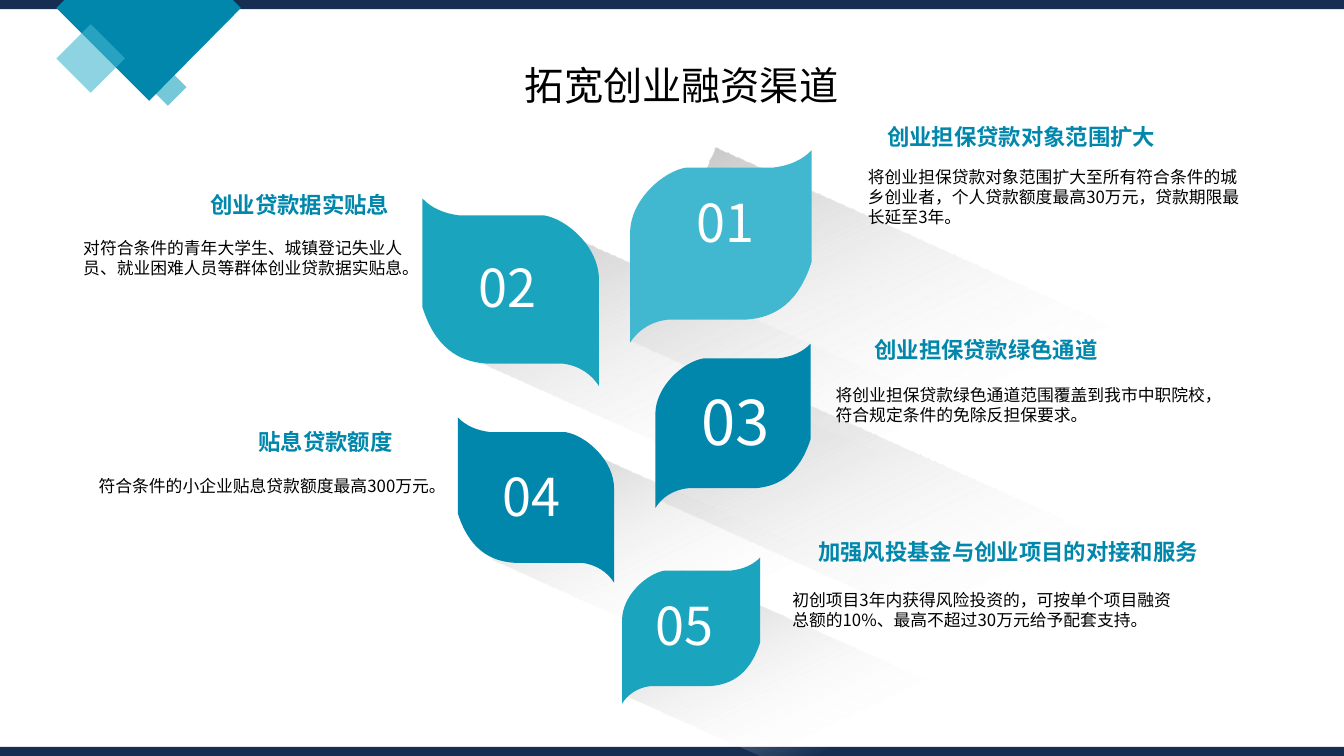
from dataclasses import dataclass

import lxml.etree
import pptx
import pptx.dml.color
import pptx.enum.shapes
import pptx.enum.text
import pptx.oxml.ns
import pptx.util

Inches = pptx.util.Inches
Align = pptx.enum.text.PP_ALIGN
Shape = pptx.enum.shapes.MSO_SHAPE
qn = pptx.oxml.ns.qn


@dataclass(frozen=True)
class Theme:
    font: str = "Noto Sans CJK SC"
    navy: str = "152E52"
    blue: str = "0187AC"
    teal: str = "1AA4BE"
    sky: str = "41B7D0"
    white: str = "FFFFFF"
    black: str = "000000"
    shade: str = "BFBFBF"
    title: float = 28
    number: float = 37.3
    large_number: float = 44
    heading: float = 16
    body: float = 12


@dataclass(frozen=True)
class Measure:
    number: str
    color: str
    petal: tuple
    number_box: tuple
    heading: str
    heading_box: tuple
    body: str
    body_box: tuple
    on_left: bool = False
    number_size: float = Theme.number


THEME = Theme()

MEASURES = [
    Measure("01", THEME.sky, (6.25, 1.49, 1.8, 1.91), (6.81, 1.84, 0.81, 0.73),
            "创业担保贷款对象范围扩大", (8.51, 1.17, 3.24, 0.37),
            "将创业担保贷款对象范围扩大至所有符合条件的城乡创业者，个人贷款额度最高30万元，贷款期限最长延至3年。",
            (8.51, 1.6, 4, 0.71)),
    Measure("02", THEME.teal, (4.19, 1.97, 1.75, 1.86), (4.65, 2.48, 0.81, 0.73),
            "创业贷款据实贴息", (1.6, 1.85, 2.75, 0.37),
            "对符合条件的青年大学生、城镇登记失业人员、就业困难人员等群体创业贷款据实贴息。",
            (0.7, 2.31, 3.39, 0.5), on_left=True),
    Measure("03", THEME.blue, (6.5, 3.41, 1.54, 1.63), (6.86, 3.76, 0.92, 0.84),
            "创业担保贷款绿色通道", (8.19, 3.29, 3.18, 0.37),
            "将创业担保贷款绿色通道范围覆盖到我市中职院校，符合规定条件的免除反担保要求。",
            (8.19, 3.77, 4, 0.5), number_size=THEME.large_number),
    Measure("04", THEME.blue, (4.54, 4.14, 1.55, 1.64), (4.89, 4.56, 0.81, 0.73),
            "贴息贷款额度", (2.14, 4.2, 2.18, 0.37),
            "符合条件的小企业贴息贷款额度最高300万元。",
            (0.7, 4.67, 3.82, 0.3), on_left=True),
    Measure("05", THEME.teal, (6.17, 5.53, 1.37, 1.45), (6.4, 5.84, 0.81, 0.73),
            "加强风投基金与创业项目的对接和服务", (7.91, 5.29, 4.18, 0.37),
            "初创项目3年内获得风险投资的，可按单个项目融资总额的10%、最高不超过30万元给予配套支持。",
            (7.76, 5.8, 4, 0.5)),
]

SHADOWS = [
    (6.53, 4.98, 6.94, 1.47),
    (6.3, 6.46, 4.21, 1.36),
    (4.96, 5.21, 4.69, 1.36),
    (4.64, 3.49, 6.81, 1.51),
    (6.37, 2.8, 6.94, 2.09),
]
SHADOW_TILT = 24.2

PETAL_CURVES = [
    ((1, 0), (0.95, 0.05), (0.88, 0.08), (0.79, 0.09)),
    ((0.31, 0.09), (0.18, 0.11), (0, 0.26), (0, 0.43)),
    ((0, 1), (0.04, 0.94), (0.11, 0.89), (0.21, 0.88)),
    ((0.64, 0.88), (0.8, 0.87), (0.93, 0.79), (1, 0.58)),
]


def rgb(color):
    return pptx.dml.color.RGBColor.from_string(color)


def add_alpha(color_element, percent):
    alpha = lxml.etree.SubElement(color_element, qn("a:alpha"))
    alpha.set("val", str(percent * 1000))


def color_elements(shape):
    return list(shape._element.spPr.iter(qn("a:srgbClr")))


def paint(shape, color, opacity=100):
    shape.shadow.inherit = False
    shape.line.fill.background()
    shape.fill.solid()
    shape.fill.fore_color.rgb = rgb(color)
    if opacity < 100:
        add_alpha(color_elements(shape)[0], opacity)


def add_block(slide, kind, box, color, opacity=100):
    shape = slide.shapes.add_shape(kind, *map(Inches, box))
    paint(shape, color, opacity)
    return shape


def add_outline(slide, points, color):
    points = [(Inches(x), Inches(y)) for x, y in points]
    builder = slide.shapes.build_freeform(*points[0])
    builder.add_line_segments(points[1:])
    shape = builder.convert_to_shape()
    paint(shape, color)
    return shape


def write(paragraph, text, size, color, bold=False):
    run = paragraph.add_run()
    run.text = text
    run.font.size = pptx.util.Pt(size)
    run.font.bold = bold
    run.font.name = THEME.font
    run.font.color.rgb = rgb(color)
    latin = run._r.rPr.find(qn("a:latin"))
    east_asian = latin.makeelement(qn("a:ea"), {"typeface": THEME.font})
    latin.addnext(east_asian)


def add_text(slide, box, text, size, color, align=Align.LEFT, bold=False, wrap=True):
    frame = slide.shapes.add_textbox(*map(Inches, box)).text_frame
    frame.word_wrap = wrap
    frame.auto_size = pptx.enum.text.MSO_AUTO_SIZE.SHAPE_TO_FIT_TEXT
    paragraph = frame.paragraphs[0]
    paragraph.alignment = align
    write(paragraph, text, size, color, bold)


def place_decoration(slide, width, height):
    bar = 0.09
    add_block(slide, Shape.DIAMOND, (1.48, 0.68, 0.37, 0.37), THEME.teal, 60)
    add_block(slide, Shape.RECTANGLE, (0, 0, width, bar), THEME.navy)
    corner = [(0.64, 0), (2.31, 0), (2.39, 0.08), (1.48, 1), (0.56, 0.08)]
    add_outline(slide, corner, THEME.blue)
    add_block(slide, Shape.DIAMOND, (0.56, 0.24, 0.68, 0.68), THEME.sky, 60)
    add_block(slide, Shape.RECTANGLE, (0, height - bar, width, bar), THEME.navy)


def place_title(slide, box, text):
    title = slide.shapes.title
    title.left, title.top, title.width, title.height = map(Inches, box)
    title.text_frame.vertical_anchor = pptx.enum.text.MSO_ANCHOR.MIDDLE
    paragraph = title.text_frame.paragraphs[0]
    paragraph.alignment = Align.CENTER
    paragraph.line_spacing = 0.9
    write(paragraph, text, THEME.title, THEME.black)


def place_shadow(slide, box):
    shape = add_block(slide, Shape.RECTANGLE, box, THEME.shade)
    shape.rotation = SHADOW_TILT
    shape.fill.gradient()
    shape.fill.gradient_angle = 320
    start, end = shape.fill.gradient_stops
    start.color.rgb, start.position = rgb(THEME.shade), 0
    end.color.rgb, end.position = rgb(THEME.white), 0.54
    add_alpha(color_elements(shape)[-1], 0)


def bend_segments(shape):
    segments = list(shape._element.spPr.iter(qn("a:lnTo")))
    for first in range(0, len(segments), 4):
        curve = segments[first].makeelement(qn("a:cubicBezTo"), {})
        segments[first].addprevious(curve)
        for segment in segments[first:first + 3]:
            curve.append(segment[0])
            segment.getparent().remove(segment)


def place_petal(slide, box, color, mirrored):
    left, top, width, height = box
    points = [(left + width * (1 - x if mirrored else x), top + height * y)
              for curve in PETAL_CURVES for x, y in curve]
    bend_segments(add_outline(slide, points, color))


def place_measure(slide, measure):
    place_petal(slide, measure.petal, measure.color, measure.on_left)
    add_text(slide, measure.number_box, measure.number, measure.number_size,
             THEME.white, wrap=False)
    add_text(slide, measure.heading_box, measure.heading, THEME.heading,
             THEME.blue, Align.CENTER, bold=True)
    add_text(slide, measure.body_box, measure.body, THEME.body, THEME.black,
             Align.RIGHT if measure.on_left else Align.LEFT)


def main():
    width, height = 13.33, 7.5
    presentation = pptx.Presentation()
    presentation.slide_width = Inches(width)
    presentation.slide_height = Inches(height)
    slide = presentation.slides.add_slide(presentation.slide_layouts[5])
    place_decoration(slide, width, height)
    place_title(slide, (0.19, 0.32, 13.14, 1.11), "拓宽创业融资渠道")
    for box in SHADOWS:
        place_shadow(slide, box)
    for measure in MEASURES:
        place_measure(slide, measure)
    presentation.save("out.pptx")


if __name__ == "__main__":
    main()
